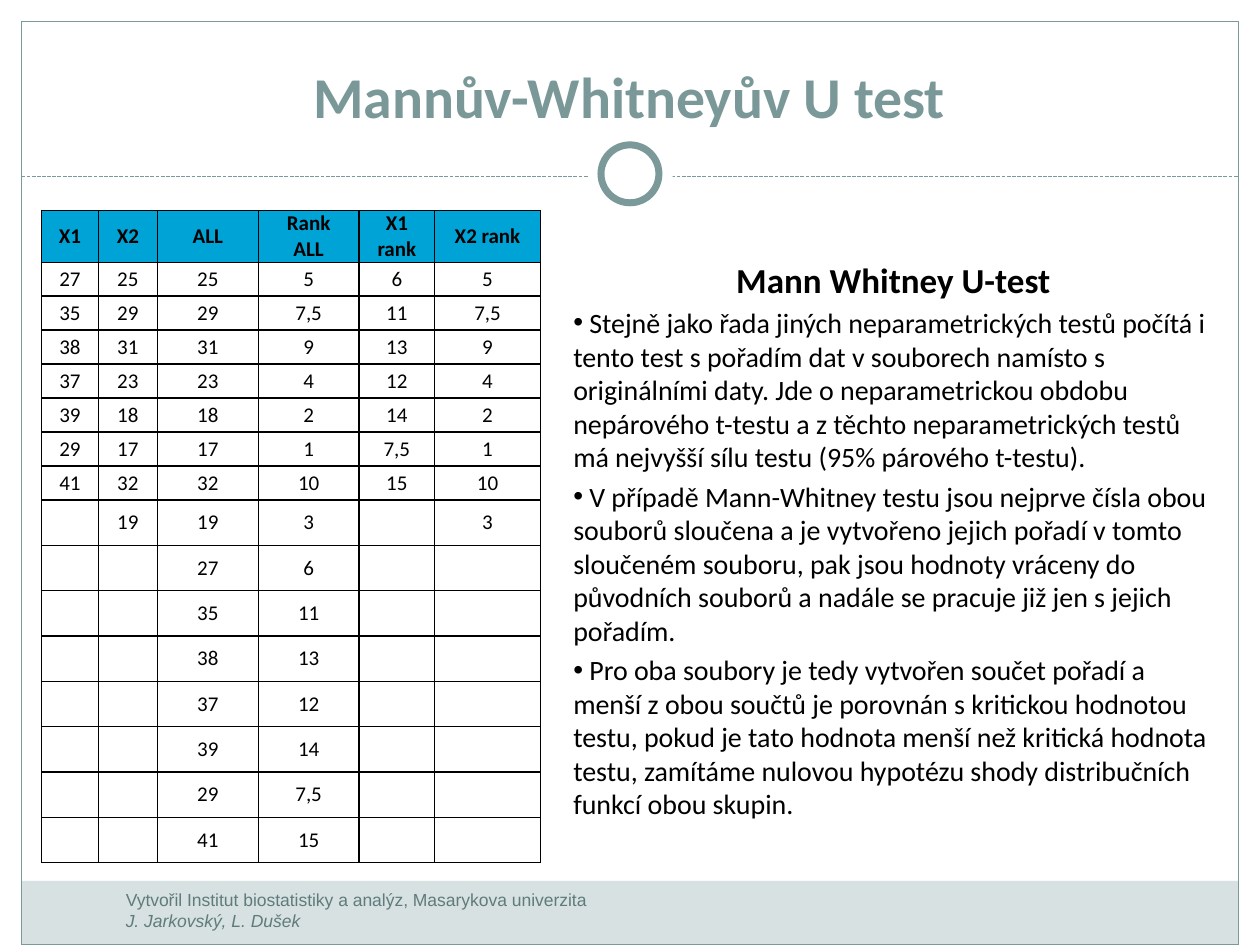
from lxml import etree
from pptx import Presentation
from pptx.dml.color import RGBColor
from pptx.enum.dml import MSO_LINE
from pptx.enum.shapes import MSO_CONNECTOR, MSO_SHAPE
from pptx.enum.text import MSO_ANCHOR, MSO_AUTO_SIZE, PP_ALIGN
from pptx.oxml.ns import qn
from pptx.util import Inches, Pt

CENTER, LEFT = PP_ALIGN.CENTER, PP_ALIGN.LEFT
RECT, OVAL = MSO_SHAPE.RECTANGLE, MSO_SHAPE.OVAL
WHITE, BLACK, SAGE, PALE = "FFFFFF", "000000", "7C999A", "D7E1E1"
TITLE_COLOR, FOOTER_COLOR, HEADER_FILL = "7B9899", "607B7C", "00A3D6"
WIDTH, HEIGHT, EDGE = 10, 7.5, 0.17

TITLE = "Mannův-Whitneyův U test"
FOOTER = ["Vytvořil Institut biostatistiky a analýz, Masarykova univerzita",
          "J. Jarkovský, L. Dušek"]
HEADING = "Mann Whitney U-test"
BULLETS = [
    " Stejně jako řada jiných neparametrických testů počítá i tento test s pořadím dat "
    "v souborech namísto s originálními daty. Jde o neparametrickou obdobu nepárového "
    "t-testu a z těchto neparametrických testů má nejvyšší sílu testu (95% párového t-testu).",
    " V případě Mann-Whitney testu jsou nejprve čísla obou souborů sloučena a je vytvořeno "
    "jejich pořadí v tomto sloučeném souboru, pak jsou hodnoty vráceny do původních souborů "
    "a nadále se pracuje již jen s jejich pořadím.",
    " Pro oba soubory je tedy vytvořen součet pořadí a menší z obou součtů je porovnán "
    "s kritickou hodnotou testu, pokud je tato hodnota menší než kritická hodnota testu, "
    "zamítáme nulovou hypotézu shody distribučních funkcí obou skupin.",
]
COLUMNS = ["X1", "X2", "ALL", "Rank ALL", "X1 rank", "X2 rank"]
COLUMN_WIDTHS = [0.45, 0.47, 0.8, 0.8, 0.6, 0.84]
X1 = ["27", "35", "38", "37", "39", "29", "41"]
X2 = ["25", "29", "31", "23", "18", "17", "32", "19"]
X1_RANKS = ["6", "11", "13", "12", "14", "7,5", "15"]
X2_RANKS = ["5", "7,5", "9", "4", "2", "1", "10", "3"]
HEADER_HEIGHT, FULL_HEIGHT, SPARSE_HEIGHT = 0.41, 0.27, 0.36

# kind, (left, top, width, height), fill, line colour, line width
BACKDROP = [
    (RECT, (0, 0, WIDTH, 1.52), WHITE, None, 0),
    (RECT, (0, 0, EDGE, HEIGHT), WHITE, None, 0),
    (RECT, (WIDTH - EDGE, 0, EDGE, HEIGHT), WHITE, None, 0),
    (RECT, (EDGE, 6.99, WIDTH - 2 * EDGE, 0.51), PALE, None, 0),
    (RECT, (EDGE, EDGE, WIDTH - 2 * EDGE, HEIGHT - EDGE), None, SAGE, 0.75),
]
RING = [
    (OVAL, (4.67, 1.05, 0.67, 0.67), WHITE, None, 0),
    (OVAL, (4.77, 1.15, 0.46, 0.46), WHITE, SAGE, 4),
]


def rgb(color):
    return RGBColor.from_string(color)


def place(shape, left, top, width, height):
    shape.left, shape.top = Inches(left), Inches(top)
    shape.width, shape.height = Inches(width), Inches(height)


def add_run(paragraph, text, size, color, bold=False, italic=False, face="Calibri"):
    run = paragraph.add_run()
    run.text = text
    font = run.font
    font.name, font.size, font.bold, font.italic = face, Pt(size), bold, italic
    font.color.rgb = rgb(color)


def add_decor(slide, kind, box, fill, line, line_width):
    shape = slide.shapes.add_shape(kind, *map(Inches, box))
    shape.shadow.inherit = False
    if fill:
        shape.fill.solid()
        shape.fill.fore_color.rgb = rgb(fill)
    else:
        shape.fill.background()
    if line:
        shape.line.color.rgb = rgb(line)
        shape.line.width = Pt(line_width)
    else:
        shape.line.fill.background()


def add_divider(slide):
    divider = slide.shapes.add_connector(
        MSO_CONNECTOR.STRAIGHT, *map(Inches, (EDGE, 1.4, WIDTH - EDGE, 1.4)))
    divider.line.color.rgb = rgb(SAGE)
    divider.line.width = Pt(0.75)
    divider.line.dash_style = MSO_LINE.SQUARE_DOT
    etree.SubElement(divider._element.spPr, qn("a:effectLst"))


def add_footer(slide):
    footer = slide.shapes.add_textbox(*map(Inches, (0.9, 7.01, 3.92, 0.4)))
    footer.text_frame.word_wrap = True
    paragraph = footer.text_frame.paragraphs[0]
    institute, authors = FOOTER
    add_run(paragraph, institute, 10, FOOTER_COLOR, face="Arial")
    paragraph.add_line_break()
    add_run(paragraph, authors, 10, FOOTER_COLOR, italic=True, face="Arial")


def set_borders(cell):
    properties = cell._tc.get_or_add_tcPr()
    for side in ("lnL", "lnR", "lnT", "lnB"):
        border = etree.SubElement(properties, qn(f"a:{side}"), w=str(Pt(0.75)))
        fill = etree.SubElement(border, qn("a:solidFill"))
        etree.SubElement(fill, qn("a:srgbClr"), val=BLACK)


def rank_rows():
    """List both samples beside the pooled values, X2 first and then X1."""
    pooled, ranks = X2 + X1, X2_RANKS + X1_RANKS
    series = [X1, X2, pooled, ranks, X1_RANKS, X2_RANKS]
    return [[values[i] if i < len(values) else "" for values in series]
            for i in range(len(pooled))]


def add_rank_table(slide):
    rows = [COLUMNS] + rank_rows()
    heights = [HEADER_HEIGHT] + [FULL_HEIGHT if all(row) else SPARSE_HEIGHT for row in rows[1:]]
    table = slide.shapes.add_table(
        len(rows), len(COLUMNS),
        *map(Inches, (0.33, 1.67, sum(COLUMN_WIDTHS), sum(heights)))).table
    table.first_row = table.horz_banding = False
    for column, width in zip(table.columns, COLUMN_WIDTHS):
        column.width = Inches(width)
    for r, (values, height) in enumerate(zip(rows, heights)):
        table.rows[r].height = Inches(height)
        for c, value in enumerate(values):
            cell = table.cell(r, c)
            cell.margin_top = cell.margin_bottom = 0
            cell.vertical_anchor = MSO_ANCHOR.MIDDLE
            set_borders(cell)
            if r == 0:
                cell.fill.solid()
                cell.fill.fore_color.rgb = rgb(HEADER_FILL)
            else:
                cell.fill.background()
            paragraph = cell.text_frame.paragraphs[0]
            paragraph.alignment = CENTER
            if value:
                add_run(paragraph, value, 12, BLACK, bold=r == 0)


def set_bullet(paragraph, char=None):
    properties = paragraph._p.get_or_add_pPr()
    properties.set("marL", "0")
    properties.set("indent", "0")
    if char:
        etree.SubElement(properties, qn("a:buFont"), typeface="Arial")
        etree.SubElement(properties, qn("a:buChar"), char=char)
    else:
        etree.SubElement(properties, qn("a:buNone"))


def fill_title(title):
    place(title, 0.33, 0.25, 9.33, 0.83)
    frame = title.text_frame
    frame.auto_size = MSO_AUTO_SIZE.NONE
    frame.vertical_anchor = MSO_ANCHOR.BOTTOM
    frame.paragraphs[0].alignment = CENTER
    add_run(frame.paragraphs[0], TITLE, 33, TITLE_COLOR, bold=True)


def fill_body(body):
    place(body, 4.45, 1.84, 5.28, 4.75)
    frame = body.text_frame
    frame.auto_size = MSO_AUTO_SIZE.NONE
    frame.vertical_anchor = MSO_ANCHOR.MIDDLE
    frame.margin_top, frame.margin_bottom = Inches(0.17), Inches(0.04)
    heading = frame.paragraphs[0]
    heading.alignment, heading.space_before = CENTER, Pt(0)
    set_bullet(heading)
    add_run(heading, HEADING, 20, BLACK, bold=True)
    for text in BULLETS:
        paragraph = frame.add_paragraph()
        paragraph.alignment, paragraph.space_before = LEFT, Pt(3.2)
        set_bullet(paragraph, "•")
        add_run(paragraph, text, 16, BLACK)


def main():
    deck = Presentation()
    deck.slide_width, deck.slide_height = Inches(WIDTH), Inches(HEIGHT)
    slide = deck.slides.add_slide(deck.slide_layouts[1])
    title, body = slide.placeholders
    for decor in BACKDROP:
        add_decor(slide, *decor)
    add_divider(slide)
    for decor in RING:
        add_decor(slide, *decor)
    add_footer(slide)
    fill_title(title)
    fill_body(body)
    # Placeholders come first in the tree, so lift them above the backdrop.
    for placeholder in (title, body):
        slide.shapes._spTree.append(placeholder._element)
    add_rank_table(slide)
    deck.save("out.pptx")


if __name__ == "__main__":
    main()
